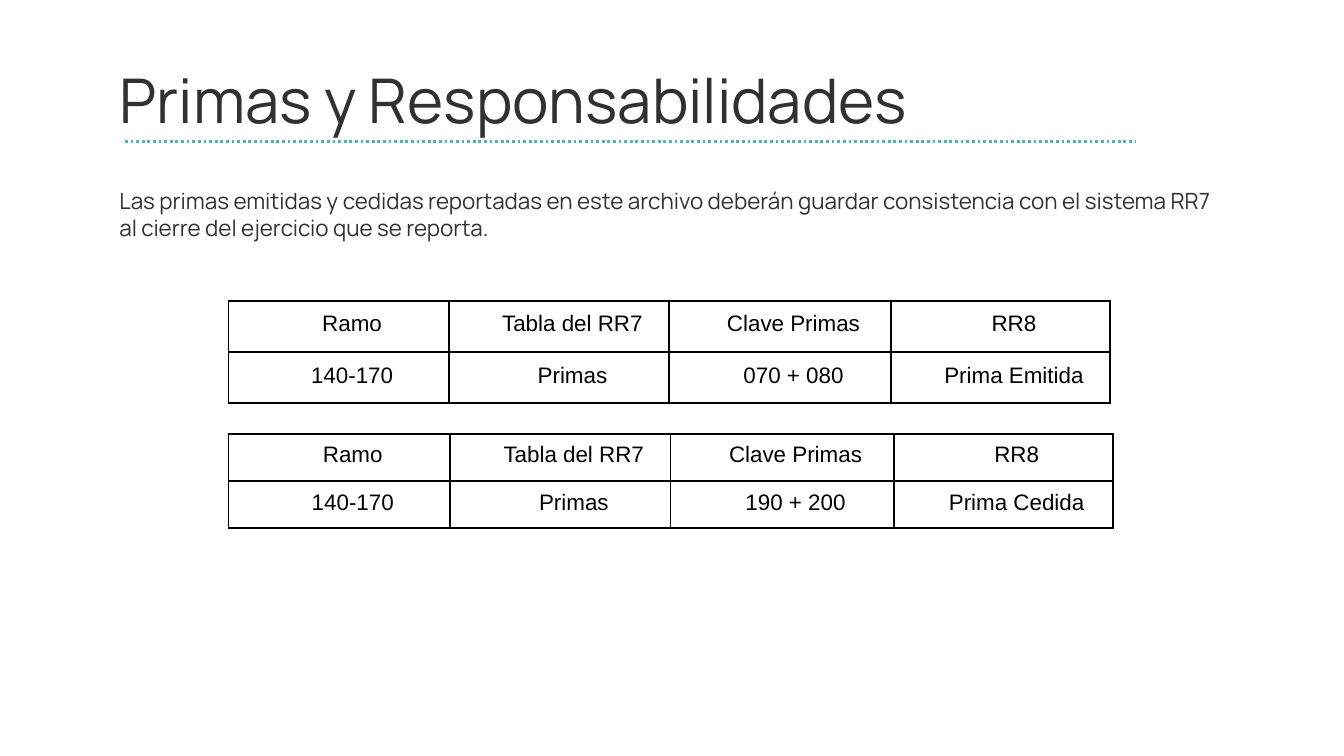
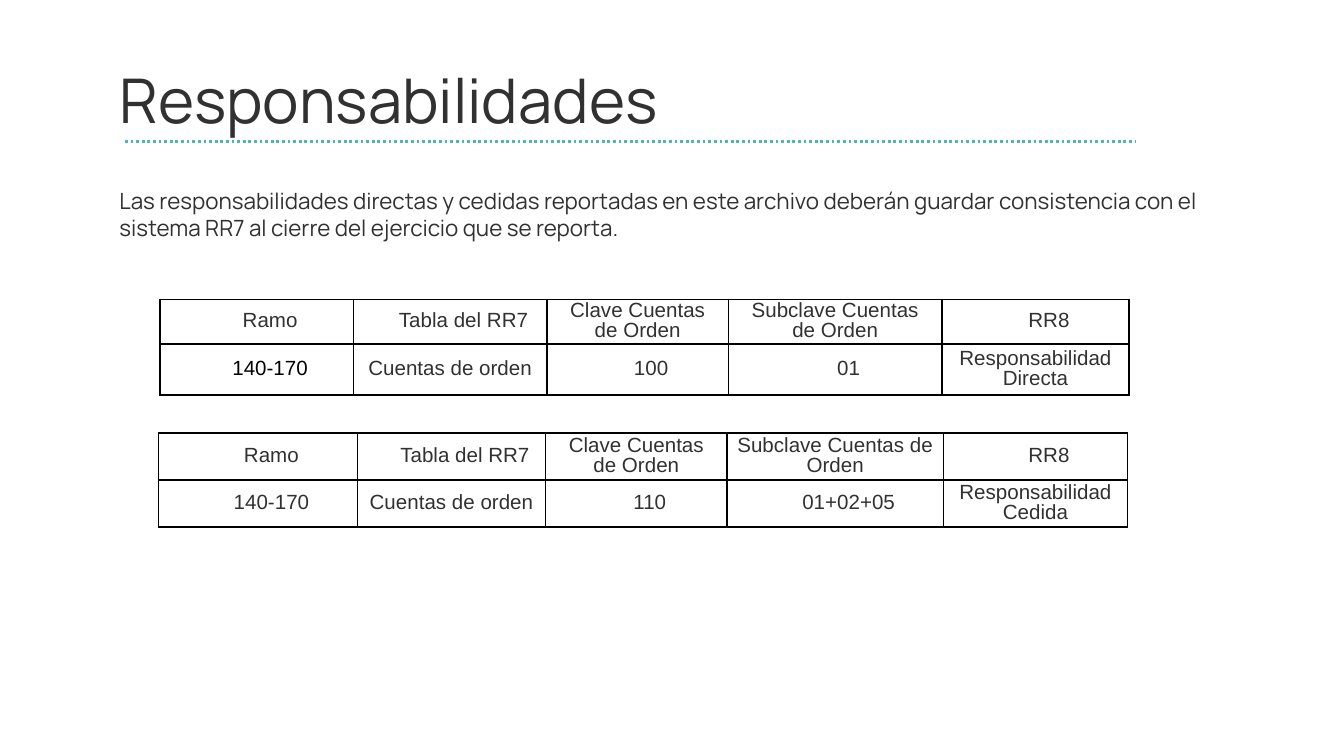
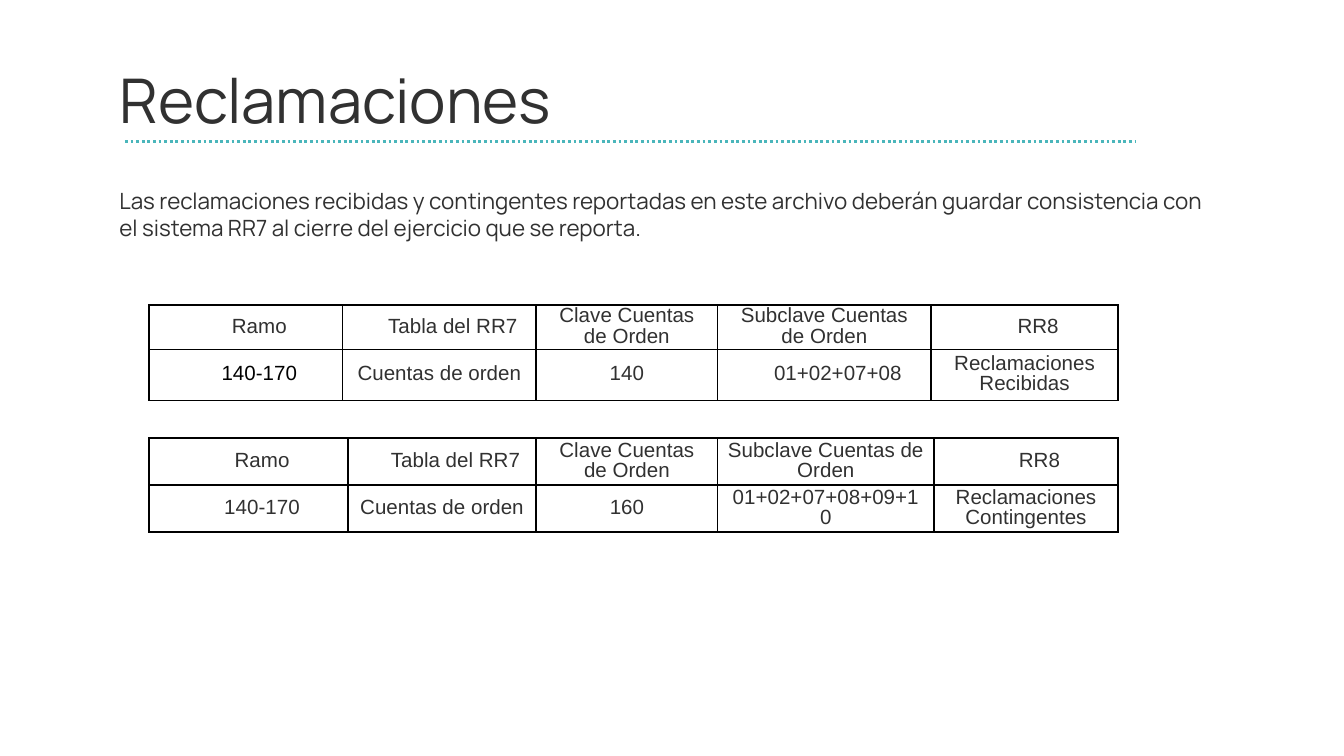
from dataclasses import dataclass

import pptx
import pptx.dml.color
import pptx.enum.dml
import pptx.enum.shapes
import pptx.enum.text
import pptx.oxml.ns
import pptx.util
from lxml import etree

Inches = pptx.util.Inches
Pt = pptx.util.Pt
qn = pptx.oxml.ns.qn


# Shared look
@dataclass(frozen=True)
class Theme:
    ink: str = "313131"
    black: str = "000000"
    white: str = "FFFFFF"
    accent: str = "4AB6BB"
    text_font: str = "Manrope"
    table_font: str = "Arial"
    title_size: int = 33
    body_size: int = 12
    premium_size: int = 12
    account_size: int = 11


THEME = Theme()


@dataclass(frozen=True)
class Style:
    font: str
    size: int
    color: str


TITLE = Style(THEME.text_font, THEME.title_size, THEME.ink)
BODY = Style(THEME.text_font, THEME.body_size, THEME.ink)
PREMIUM = Style(THEME.table_font, THEME.premium_size, THEME.black)
ACCOUNT = Style(THEME.table_font, THEME.account_size, THEME.ink)


@dataclass(frozen=True)
class Grid:
    left: float
    top: float
    columns: tuple[float, ...]
    heights: tuple[float, float]
    header: tuple[str, ...]
    values: tuple[str, ...]
    style: Style
    flat_header: tuple[int, ...] = ()  # columns without hanging indent
    flat_values: tuple[int, ...] = ()
    branch_color: str = THEME.ink


@dataclass(frozen=True)
class Topic:
    title: str
    subject: str
    grids: tuple[Grid, ...]


# Content
PREMIUM_HEADER = ("Ramo", "Tabla del RR7", "Clave Primas", "RR8")
ACCOUNT_HEADER = ("Ramo", "Tabla del RR7", "Clave Cuentas de Orden",
                  "Subclave Cuentas de Orden", "RR8")
BRANCH = "140-170"


def premium_grid(top: float, columns: tuple[float, ...], height: float,
                 key: str, result: str) -> Grid:
    return Grid(1.7, top, columns, (height, height), PREMIUM_HEADER,
                (BRANCH, "Primas", key, result), PREMIUM,
                branch_color=THEME.black)


def account_grids(lefts: tuple[float, float], top: float,
                  rows: tuple[tuple[str, str, str], ...],
                  flat_values: tuple[tuple[int, ...], ...]) -> tuple[Grid, ...]:
    columns = ((1.44, 1.44, 1.35, 1.59, 1.39), (1.48, 1.4, 1.35, 1.61, 1.37))
    heights = ((0.33, 0.38), (0.35, 0.35))
    colors = (THEME.black, THEME.ink)
    return tuple(
        Grid(lefts[index], top + 0.99 * index, columns[index], heights[index],
             ACCOUNT_HEADER, (BRANCH, "Cuentas de orden", *row), ACCOUNT,
             (2, 3), flat_values[index], colors[index])
        for index, row in enumerate(rows))


TOPICS = (
    Topic("Primas y Responsabilidades", "primas emitidas y cedidas", (
        premium_grid(2.24, (1.64, 1.64, 1.65, 1.63), 0.38,
                     "070 + 080", "Prima Emitida"),
        premium_grid(3.23, (1.65, 1.64, 1.66, 1.63), 0.35,
                     "190 + 200", "Prima Cedida"))),
    Topic("Responsabilidades", "responsabilidades directas y cedidas",
          account_grids((1.19, 1.18), 2.23,
                        (("100", "01", "Responsabilidad Directa"),
                         ("110", "01+02+05", "Responsabilidad Cedida")),
                        ((1, 4), (1, 4)))),
    Topic("Reclamaciones", "reclamaciones recibidas y contingentes",
          account_grids((1.11, 1.11), 2.27,
                        (("140", "01+02+07+08", "Reclamaciones Recibidas"),
                         ("160", "01+02+07+08+09+10", "Reclamaciones Contingentes")),
                        ((1, 2, 4), (1, 2, 3, 4)))),
)


# Drawing
def set_all(target, values: dict) -> None:
    for name, value in values.items():
        setattr(target, name, value)


def rgb(color: str) -> pptx.dml.color.RGBColor:
    return pptx.dml.color.RGBColor.from_string(color)


def write(para, text: str, style: Style, color: str = "") -> None:
    span = para.add_run()
    span.text = text
    set_all(span.font, {"name": style.font, "size": Pt(style.size), "bold": False})
    span.font.color.rgb = rgb(color or style.color)


def add_text(page, place: tuple[float, ...], text: str, style: Style) -> None:
    box = page.shapes.add_textbox(*map(Inches, place))
    margin = Inches(0.1)
    set_all(box.text_frame, {
        "word_wrap": True,
        "vertical_anchor": pptx.enum.text.MSO_ANCHOR.MIDDLE,
        "margin_left": margin, "margin_right": margin,
        "margin_top": margin, "margin_bottom": margin})
    write(box.text_frame.paragraphs[0], text, style)


def add_rule(page) -> None:
    rule = page.shapes.add_connector(
        pptx.enum.shapes.MSO_CONNECTOR.STRAIGHT,
        Inches(0.93), Inches(1.05), Inches(8.45), Inches(1.05))
    rule.line.color.rgb = rgb(THEME.accent)
    set_all(rule.line, {"width": Pt(1.5),
                        "dash_style": pptx.enum.dml.MSO_LINE.ROUND_DOT})
    etree.SubElement(rule._element.spPr, qn("a:effectLst"))


def add_borders(cell) -> None:
    properties = cell._tc.get_or_add_tcPr()
    for index, side in enumerate(("a:lnL", "a:lnR", "a:lnT", "a:lnB")):
        edge = etree.Element(qn(side), w=str(Pt(1)))
        fill = etree.SubElement(edge, qn("a:solidFill"))
        etree.SubElement(fill, qn("a:srgbClr"), val=THEME.black)
        properties.insert(index, edge)


def fill_cell(cell, text: str, style: Style, color: str, flat: bool) -> None:
    set_all(cell, {
        "vertical_anchor": pptx.enum.text.MSO_ANCHOR.MIDDLE,
        "margin_left": Inches(0.07), "margin_right": Inches(0.07),
        "margin_top": 0, "margin_bottom": 0})
    cell.fill.solid()
    cell.fill.fore_color.rgb = rgb(THEME.white)
    add_borders(cell)
    para = cell.text_frame.paragraphs[0]
    set_all(para, {"alignment": pptx.enum.text.PP_ALIGN.CENTER,
                   "line_spacing": Pt(10.8), "space_after": Pt(6)})
    if not flat:
        properties = para._p.get_or_add_pPr()
        properties.set("marL", str(Inches(0.5)))
        properties.set("indent", str(Inches(-0.3)))
    write(para, text, style, color)


def add_grid(page, grid: Grid) -> None:
    frame = page.shapes.add_table(
        2, len(grid.columns), Inches(grid.left), Inches(grid.top),
        Inches(sum(grid.columns)), Inches(sum(grid.heights)))
    table = frame.table
    set_all(table, {"first_row": False, "horz_banding": False})
    for column, width in zip(table.columns, grid.columns):
        column.width = Inches(width)
    for row, height in zip(table.rows, grid.heights):
        row.height = Inches(height)
    rows = ((grid.header, grid.flat_header), (grid.values, grid.flat_values))
    for row_index, (texts, flat_columns) in enumerate(rows):
        for column_index, text in enumerate(texts):
            color = grid.branch_color if text == BRANCH else grid.style.color
            fill_cell(table.cell(row_index, column_index), text, grid.style,
                      color, column_index in flat_columns)


def add_topic(deck, topic: Topic) -> None:
    page = deck.slides.add_slide(deck.slide_layouts[6])
    add_text(page, (0.79, 0.42, 6.94, 0.63), topic.title, TITLE)
    add_text(page, (0.79, 1.17, 8.43, 0.85),
             f"Las {topic.subject} reportadas en este archivo deberán guardar "
             "consistencia con el sistema RR7 al cierre del ejercicio que se reporta.",
             BODY)
    add_rule(page)
    for grid in topic.grids:
        add_grid(page, grid)


def main() -> None:
    deck = pptx.Presentation()
    # Widescreen, 16:9
    set_all(deck, {"slide_width": Inches(10), "slide_height": Inches(10 * 9 / 16)})
    for topic in TOPICS:
        add_topic(deck, topic)
    deck.save("out.pptx")


if __name__ == "__main__":
    main()
